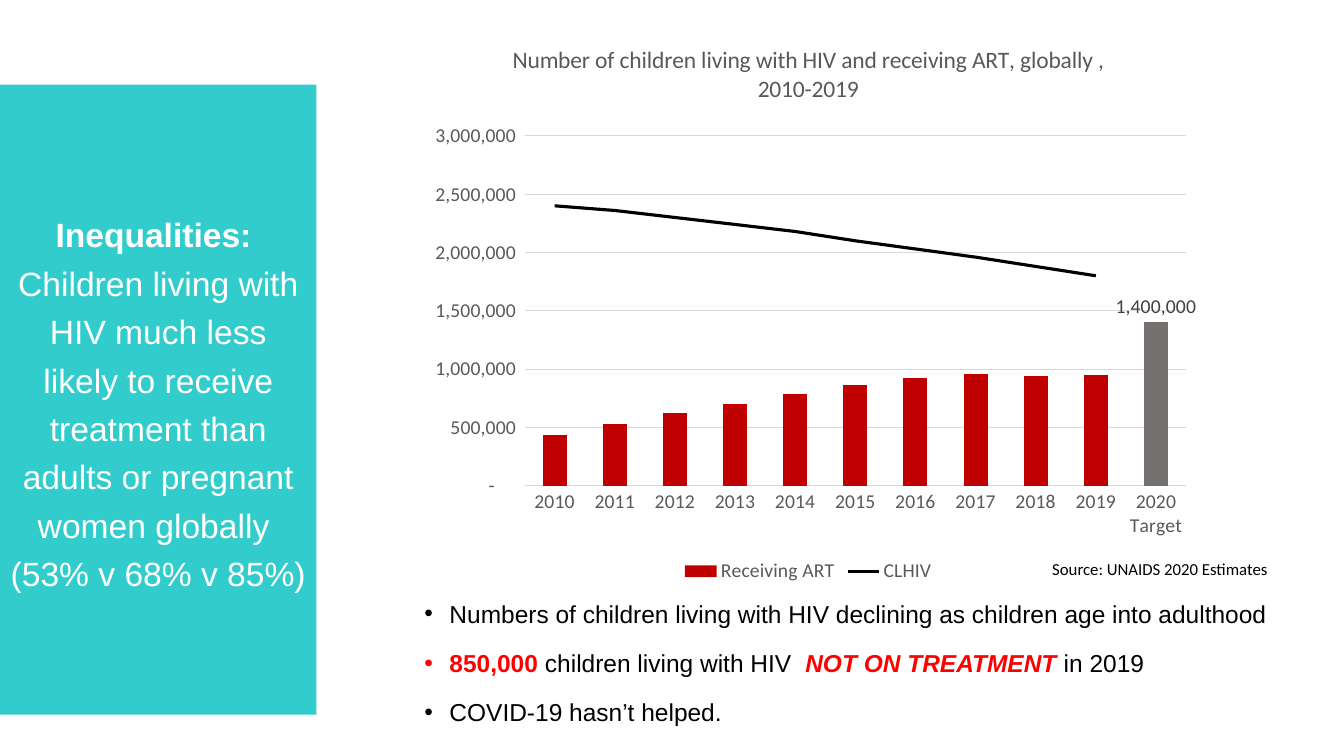
from dataclasses import dataclass

from lxml.etree import SubElement
from pptx import Presentation
from pptx.chart.data import CategoryChartData
from pptx.dml.color import RGBColor
from pptx.enum.chart import (XL_CHART_TYPE, XL_LABEL_POSITION, XL_LEGEND_POSITION,
                             XL_MARKER_STYLE, XL_TICK_MARK)
from pptx.enum.shapes import MSO_SHAPE
from pptx.enum.text import MSO_ANCHOR, MSO_AUTO_SIZE, PP_ALIGN
from pptx.oxml import parse_xml
from pptx.oxml.ns import nsdecls, qn
from pptx.util import Pt

WHITE, BLACK, RED = "FFFFFF", "000000", "FF0000"
TEAL, CRIMSON, TARGET_GREY = "33CCCC", "C00000", "767171"
AXIS_TEXT, RULE, LABEL_TEXT = "595959", "D9D9D9", "404040"
NUMBER_FORMAT = '_-* #,##0_-;\\-* #,##0_-;_-* "-"??_-;_-@_'


@dataclass
class Box:
    left: float
    top: float
    width: float
    height: float

    def place(self) -> tuple:
        return Pt(self.left), Pt(self.top), Pt(self.width), Pt(self.height)


@dataclass
class Span:
    text: str
    color: str = BLACK
    bold: bool = False
    italic: bool = False


PANEL = Box(0, 60.5, 226, 450)
BULLETS = Box(296, 420, 648, 120)
CHART = Box(296, 16.5, 562.5, 403)
SOURCE = Box(744.5, 395.25, 170.6, 16.6)

HEADING = [
    Span("Inequalities:  ", WHITE, bold=True),
    Span("Children living with HIV much less likely to receive treatment than "
         "adults or pregnant women globally ", WHITE),
]
RATES = Span("(53% v 68% v 85%)", WHITE)
POINTS = [
    [Span("Numbers of children living with HIV declining as children age into adulthood")],
    [Span("850,000 ", RED, bold=True), Span("children living with HIV  "),
     Span("NOT ON TREATMENT ", RED, bold=True, italic=True), Span("in 2019")],
    [Span("COVID-19 hasn’t helped.")],
]
YEARS = [str(year) for year in range(2010, 2020)] + ["2020 Target"]
RECEIVING_ART = [434932, 530883, 621507, 700270, 789477, 860415,
                 920265, 957055, 939482, 948026, 1400000]
CLHIV = [2400000, 2360000, 2300000, 2240000, 2180000,
         2100000, 2030000, 1960000, 1880000, 1800000, None]


def rgb(value: str) -> RGBColor:
    return RGBColor.from_string(value)


def set_font(font, size: float, color: str, name: str = "Calibri") -> None:
    font.size, font.name = Pt(size), name
    font.color.rgb = rgb(color)


def set_line(line, color: str, width: float) -> None:
    line.color.rgb = rgb(color)
    line.width = Pt(width)


def add_spans(p, spans: list[Span], size: float) -> None:
    for span in spans:
        r = p.add_run()
        r.text = span.text
        set_font(r.font, size, span.color, "Arial")
        r.font.bold, r.font.italic = span.bold, span.italic


def add_bullet(p) -> None:
    pPr = p._p.get_or_add_pPr()
    pPr.set("marL", str(Pt(18)))
    pPr.set("indent", str(Pt(-18)))
    SubElement(pPr, qn("a:buFont")).set("typeface", "Arial")
    SubElement(pPr, qn("a:buChar")).set("char", "•")


def add_panel(s) -> None:
    sp = s.shapes.add_shape(MSO_SHAPE.RECTANGLE, *PANEL.place())
    sp.shadow.inherit = False
    sp.fill.solid()
    sp.fill.fore_color.rgb = rgb(TEAL)
    sp.line.fill.background()
    tf = sp.text_frame
    tf.word_wrap, tf.vertical_anchor = True, MSO_ANCHOR.MIDDLE
    p = tf.paragraphs[0]
    p.alignment, p.line_spacing = PP_ALIGN.CENTER, 1.2
    add_spans(p, HEADING, 24)
    p.add_line_break()
    add_spans(p, [RATES], 24)


def add_points(s) -> None:
    tf = s.shapes.add_textbox(*BULLETS.place()).text_frame
    tf.word_wrap = True
    for i, spans in enumerate(POINTS):
        p = tf.add_paragraph() if i else tf.paragraphs[0]
        p.line_spacing = 1.2
        p.space_before = Pt(10 if i else 0)
        add_bullet(p)
        add_spans(p, spans, 17.5)


def add_source(s) -> None:
    tf = s.shapes.add_textbox(*SOURCE.place()).text_frame
    tf.word_wrap, tf.auto_size = False, MSO_AUTO_SIZE.SHAPE_TO_FIT_TEXT
    tf.text = "Source: UNAIDS 2020 Estimates"
    set_font(tf.paragraphs[0].runs[0].font, 12, BLACK)


def move_last_series_to_line(chart) -> None:
    bar = chart._chartSpace.find(".//" + qn("c:barChart"))
    ser = bar.findall(qn("c:ser"))[-1]
    for bar_only in ser.findall(qn("c:invertIfNegative")):
        ser.remove(bar_only)
    axes = "".join(f'<c:axId val="{a.get("val")}"/>' for a in bar.findall(qn("c:axId")))
    line = parse_xml(f'<c:lineChart {nsdecls("c")}><c:grouping val="standard"/>'
                     f'<c:varyColors val="0"/><c:marker val="1"/>{axes}</c:lineChart>')
    line.insert(2, ser)
    bar.addnext(line)


def set_plot_layout(chart, x: float, y: float, w: float, h: float) -> None:
    area = chart._chartSpace.find(".//" + qn("c:plotArea"))
    for old in area.findall(qn("c:layout")):
        area.remove(old)
    area.insert(0, parse_xml(
        f'<c:layout {nsdecls("c")}><c:manualLayout><c:layoutTarget val="inner"/>'
        f'<c:xMode val="edge"/><c:yMode val="edge"/><c:x val="{x}"/><c:y val="{y}"/>'
        f'<c:w val="{w}"/><c:h val="{h}"/></c:manualLayout></c:layout>'))


def add_treatment_chart(s) -> None:
    data = CategoryChartData(number_format=NUMBER_FORMAT)
    data.categories = YEARS
    data.add_series("Receiving ART", RECEIVING_ART)
    data.add_series("CLHIV", CLHIV)
    chart = s.shapes.add_chart(XL_CHART_TYPE.COLUMN_CLUSTERED, *CHART.place(), data).chart
    set_font(chart.font, 14, BLACK)
    move_last_series_to_line(chart)
    set_plot_layout(chart, 0.14, 0.2, 0.84, 0.62)

    # Title and legend
    chart.has_title = True
    p = chart.chart_title.text_frame.paragraphs[0]
    p.text = "Number of children living with HIV and receiving ART, globally , 2010-2019"
    set_font(p.runs[0].font, 16.8, AXIS_TEXT)
    p.runs[0].font.bold = False
    chart.has_legend = True
    chart.legend.position = XL_LEGEND_POSITION.BOTTOM
    chart.legend.include_in_layout = False
    set_font(chart.legend.font, 14, AXIS_TEXT)

    # Axes
    for axis in (chart.category_axis, chart.value_axis):
        axis.major_tick_mark = axis.minor_tick_mark = XL_TICK_MARK.NONE
        set_font(axis.tick_labels.font, 14, AXIS_TEXT)
    set_line(chart.category_axis.format.line, RULE, 0.75)
    values = chart.value_axis
    values.format.line.fill.background()
    values.minimum_scale, values.maximum_scale, values.major_unit = 0, 3000000, 500000
    values.has_major_gridlines = True
    set_line(values.major_gridlines.format.line, RULE, 0.75)
    values.tick_labels.number_format = NUMBER_FORMAT
    values.tick_labels.number_format_is_linked = False

    # Columns, with the target set apart
    columns, trend = chart.plots
    columns.gap_width, columns.vary_by_categories = 150, False
    treated = columns.series[0]
    target = treated.points[len(YEARS) - 1]
    for part, color in ((treated, CRIMSON), (target, TARGET_GREY)):
        part.format.fill.solid()
        part.format.fill.fore_color.rgb = rgb(color)
    treated.data_labels.show_value = False
    set_font(target.data_label.font, 14, LABEL_TEXT)
    target.data_label.position = XL_LABEL_POSITION.OUTSIDE_END

    # Trend line
    living = trend.series[0]
    living.smooth = False
    living.marker.style = XL_MARKER_STYLE.NONE
    set_line(living.format.line, BLACK, 2.25)


def main() -> None:
    prs = Presentation()
    prs.slide_width, prs.slide_height = Pt(960), Pt(540)
    s = prs.slides.add_slide(prs.slide_layouts[6])
    add_panel(s)
    add_points(s)
    add_treatment_chart(s)
    add_source(s)
    prs.save("out.pptx")


if __name__ == "__main__":
    main()
